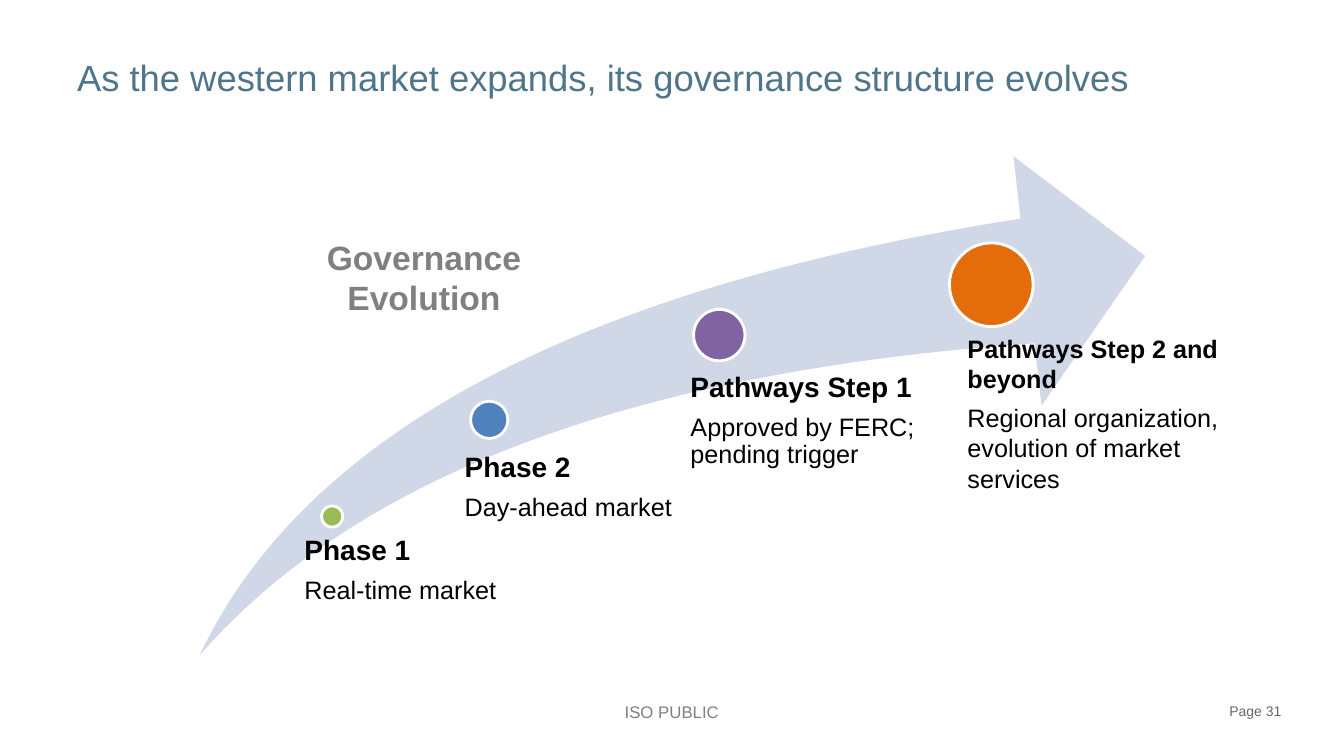
from dataclasses import dataclass

from pptx import Presentation
from pptx.dml.color import RGBColor
from pptx.enum.shapes import MSO_SHAPE
from pptx.enum.text import PP_ALIGN
from pptx.util import Pt


@dataclass(frozen=True)
class Theme:
    font: str = "Arial"
    title: str = "4F758B"
    text: str = "000000"
    muted: str = "808080"
    page: str = "686868"
    outline: str = "FFFFFF"
    arrow: str = "D0D8E8"
    green: str = "9BBB59"
    blue: str = "4F81BD"
    purple: str = "8064A2"
    orange: str = "E46C0A"
    title_size: float = 26
    caption_size: float = 24
    heading_size: float = 20
    body_size: float = 18
    footer_size: float = 12
    page_size: float = 10


class SlideBuilder:
    def __init__(self, slide, theme):
        self.slide = slide
        self.theme = theme

    def shape(self, kind, box, fill, outlined=False):
        shape = self.slide.shapes.add_shape(kind, *map(Pt, box))
        shape.shadow.inherit = False
        shape.fill.solid()
        shape.fill.fore_color.rgb = RGBColor.from_string(fill)
        if outlined:
            shape.line.color.rgb = RGBColor.from_string(self.theme.outline)
            shape.line.width = Pt(2)
        else:
            shape.line.fill.background()
        return shape

    def text(self, box, lines, size, color, bold=False, align=PP_ALIGN.LEFT):
        text_box = self.slide.shapes.add_textbox(*map(Pt, box))
        frame = text_box.text_frame
        frame.word_wrap = True
        frame.text = "\n".join(lines)
        for paragraph in frame.paragraphs:
            paragraph.alignment = align
            font = paragraph.runs[0].font
            font.name = self.theme.font
            font.size = Pt(size)
            font.bold = bold
            font.color.rgb = RGBColor.from_string(color)
        return frame

    def milestone(self, dot, color, box, lines, heading_size, inset, gap, spacing):
        left, top, diameter = dot
        self.shape(MSO_SHAPE.OVAL, (left, top, diameter, diameter), color, outlined=True)
        frame = self.text(box, lines, self.theme.body_size, self.theme.text)
        if inset is not None:
            frame.margin_left = Pt(inset)
            frame.margin_top = frame.margin_right = frame.margin_bottom = 0
        for paragraph in frame.paragraphs:
            paragraph.line_spacing = spacing
        heading = frame.paragraphs[0]
        heading.space_after = Pt(gap)
        heading.runs[0].font.size = Pt(heading_size)
        heading.runs[0].font.bold = True


def main():
    presentation = Presentation()
    presentation.slide_width, presentation.slide_height = Pt(960), Pt(540)
    slide = presentation.slides.add_slide(presentation.slide_layouts[6])
    theme = Theme()
    builder = SlideBuilder(slide, theme)

    # Title
    builder.text((48, 36, 864, 75.6),
                 ["As the western market expands, its governance structure evolves"],
                 theme.title_size, theme.title)

    # Rising arrow
    arrow = builder.shape(MSO_SHAPE.SWOOSH_ARROW, (142.6, 111.6, 675.4, 356.4), theme.arrow)
    arrow.adjustments[0] = arrow.adjustments[1] = 0.25

    # Milestones: dot, color, text box, lines, heading size, inset, gap, line spacing
    milestones = [
        ((229.7, 361.4, 15.1), theme.green, (209.5, 383, 174.2, 74.2),
         ["Phase 1", "Real-time market"], theme.heading_size, 7.9, 8, 0.9),
        ((336.2, 286.6, 26.6), theme.blue, (317.5, 324, 175.7, 59),
         ["Phase 2", "Day-ahead market"], theme.heading_size, 14.4, 8, 0.9),
        ((495.4, 221, 36.7), theme.purple, (473.8, 266.4, 185.8, 71.3),
         ["Pathways Step 1", "Approved by FERC; pending trigger"],
         theme.heading_size, 19.4, 8, 0.9),
        ((678.2, 173.5, 59.8), theme.orange, (684, 234.7, 203.8, 122.4),
         ["Pathways Step 2 and beyond", "Regional organization, evolution of market services"],
         theme.body_size, None, 6, 1.0),
    ]
    for milestone in milestones:
        builder.milestone(*milestone)

    # Arrow caption
    builder.text((221.8, 165.6, 162, 65.5), ["Governance", "Evolution"],
                 theme.caption_size, theme.muted, bold=True, align=PP_ALIGN.CENTER)

    # Footer
    builder.text((324.7, 497.5, 310.3, 21.6), ["ISO PUBLIC"],
                 theme.footer_size, theme.muted, align=PP_ALIGN.CENTER)
    builder.text((702, 498.2, 220.3, 24.5), ["Page 31"],
                 theme.page_size, theme.page, align=PP_ALIGN.RIGHT)

    presentation.save("out.pptx")


if __name__ == "__main__":
    main()
